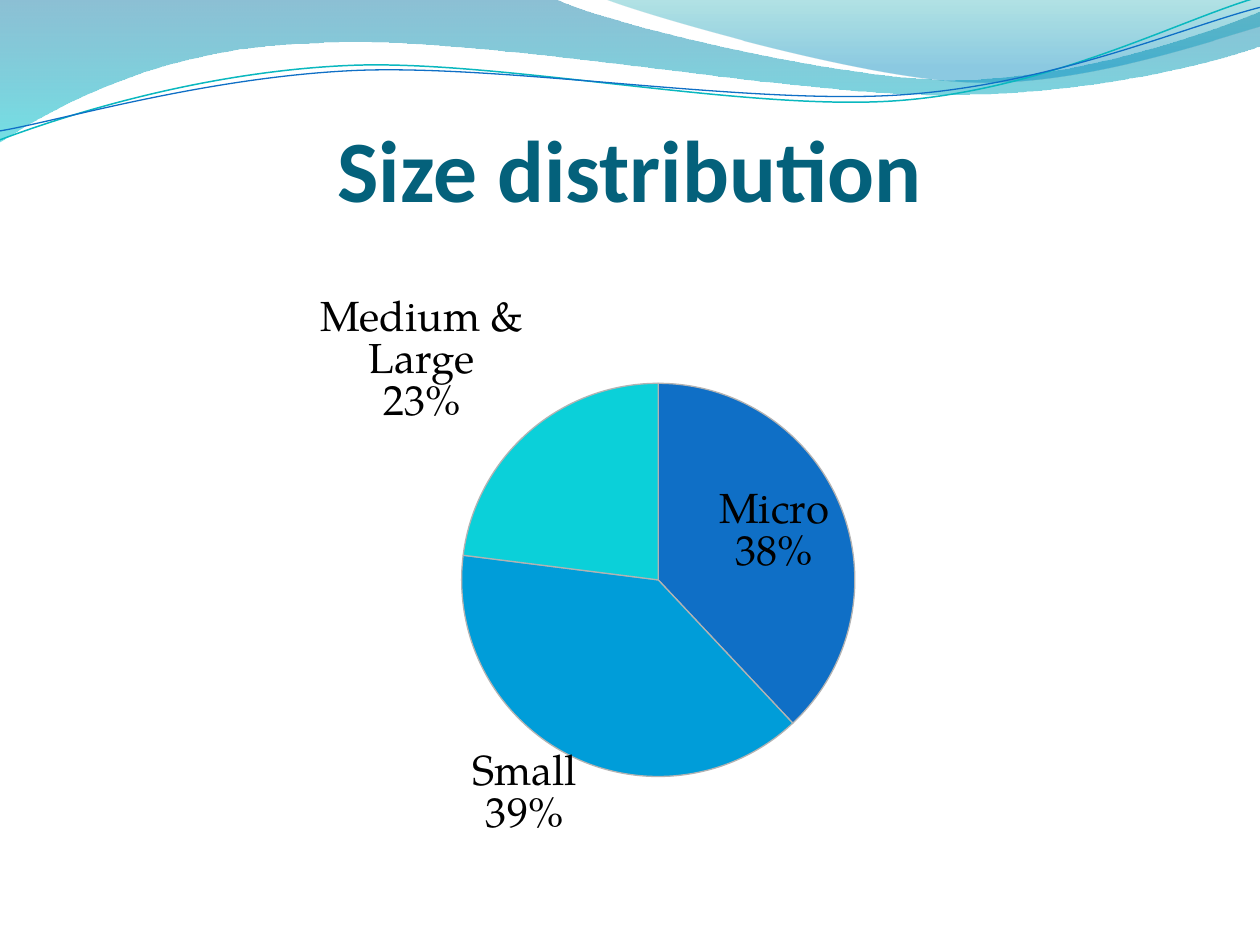
from copy import deepcopy
from dataclasses import dataclass

from lxml.etree import SubElement
from pptx import Presentation
from pptx.chart.data import CategoryChartData
from pptx.dml.color import RGBColor
from pptx.enum.chart import XL_CHART_TYPE as ChartType, XL_LABEL_POSITION as LabelPosition
from pptx.enum.text import MSO_ANCHOR as Anchor, PP_ALIGN as Align
from pptx.oxml import parse_xml
from pptx.oxml.ns import nsdecls, qn
from pptx.util import Cm, Pt

Point = tuple[float, float]
Segment = tuple[float, ...]


@dataclass(frozen=True)
class Theme:
    title_font: str = "Calibri"
    body_font: str = "TeX Gyre Pagella"
    title_size: float = 50
    label_size: float = 24
    title_color: str = "04617B"
    text_color: str = "000000"
    slice_line: str = "B3B3B3"


@dataclass(frozen=True)
class Stop:
    position: float
    color: str
    opacity: int


@dataclass(frozen=True)
class Wave:
    """Outline in cm: a segment holds one end point, or two controls and an end."""
    start: Point
    segments: tuple[Segment, ...]
    stops: tuple[Stop, ...] = ()
    line_color: str = ""
    line_width: float = 0


@dataclass(frozen=True)
class Slice:
    name: str
    value: int
    color: str


THEME = Theme()

WAVES = (
    Wave((0, 0), (
        (11.18, -0.03),
        (12.09, 0.43, 16.87, 1.6, 19.25, 1.6),
        (21.67, 1.6, 24.33, 0.66, 25.4, 0.23),
        (25.43, 0.91),
        (24.97, 1.12, 22.1, 1.93, 18.95, 1.91),
        (15.8, 1.91, 9.7, 0.71, 6.53, 0.86),
        (3.28, 0.91, 1.17, 2.11, -0.03, 2.87),
    ), stops=(Stop(0, "0074A1", 45), Stop(1, "00C6CF", 55))),
    Wave((12.17, -0.03), (
        (12.93, 0.28, 17.32, 1.57, 19.53, 1.65),
        (21.74, 1.75, 24.41, 0.81, 25.4, 0.53),
        (25.4, 0),
    ), stops=(Stop(0, "00A1A9", 30), Stop(0.8, "008BBF", 45))),
    Wave((0, 2.82), (
        (1.22, 2.36, 4.01, 1.45, 7.04, 1.32),
        (10.03, 1.19, 15.06, 2.26, 18.11, 2.03),
        (21.16, 1.8, 23.83, 0.38, 25.35, -0.05),
    ), line_color="0AB8BF", line_width=0.85),
    Wave((0, 2.64), (
        (1.19, 2.44, 4.17, 1.55, 7.19, 1.42),
        (10.24, 1.3, 15.16, 2.13, 18.21, 1.91),
        (21.23, 1.7, 23.9, 0.53, 25.4, 0.15),
    ), line_color="0F6FC6", line_width=0.75),
)

SLICES = (
    Slice("Micro", 38, "0F6FC6"),
    Slice("Small", 39, "009DD9"),
    Slice("Medium & Large", 23, "0BD0D9"),
)


def rgb(color: str) -> RGBColor:
    return RGBColor.from_string(color)


def apply_format(target, values: dict) -> None:
    for name, value in values.items():
        setattr(target, name, value)


def build_outline(slide, wave: Wave):
    """Build a freeform through the end points, then bend its lines into curves."""
    builder = slide.shapes.build_freeform(*map(Cm, wave.start))
    ends = [tuple(map(Cm, segment[-2:])) for segment in wave.segments]
    builder.add_line_segments(ends, close=bool(wave.stops))
    shape = builder.convert_to_shape()
    lines = list(shape._element.iter(qn("a:lnTo")))
    for line, segment in zip(lines, wave.segments):
        if len(segment) == 2:
            continue
        line.tag = qn("a:cubicBezTo")
        line.clear()
        for x, y in zip(segment[::2], segment[1::2]):
            SubElement(line, qn("a:pt"), x=str(Cm(x) - shape.left), y=str(Cm(y) - shape.top))
    return shape


def draw_wave(slide, wave: Wave):
    shape = build_outline(slide, wave)
    shape.shadow.inherit = False
    if not wave.stops:
        shape.fill.background()
        shape.line.color.rgb = rgb(wave.line_color)
        shape.line.width = Pt(wave.line_width)
        return shape
    shape.line.fill.background()
    shape.fill.gradient()
    shape.fill.gradient_angle = 270
    for gradient_stop, stop in zip(shape.fill.gradient_stops, wave.stops):
        gradient_stop.color.rgb = rgb(stop.color)
        gradient_stop.position = stop.position
    colors = shape.fill._xPr.iter(qn("a:srgbClr"))
    for color, stop in zip(colors, wave.stops):
        SubElement(color, qn("a:alpha")).set("val", str(stop.opacity * 1000))
    return shape


def move_to_master(shape, master, order: int) -> None:
    """Put the shape behind the master's placeholders, so it decorates every slide."""
    shape._element.nvSpPr.cNvPr.set("id", str(100 + order))
    master.shapes._spTree.insert(2 + order, shape._element)


def format_title(slide, text: str) -> None:
    title = slide.shapes.title
    apply_format(title, dict(left=Cm(1.27), top=Cm(1.95), width=Cm(22.86), height=Cm(2.49)))
    apply_format(title.text_frame, dict(
        text=text, vertical_anchor=Anchor.BOTTOM, word_wrap=True,
        margin_left=0, margin_right=0, margin_top=Cm(0.13), margin_bottom=0))
    paragraph = title.text_frame.paragraphs[0]
    paragraph.alignment = Align.CENTER
    font = paragraph.runs[0].font
    apply_format(font, dict(name=THEME.title_font, size=Pt(THEME.title_size), bold=True))
    font.color.rgb = rgb(THEME.title_color)


def manual_layout(content: str, **fractions: float):
    sizes = "".join(f'<c:{name} val="{value}"/>' for name, value in fractions.items())
    return parse_xml(f'<c:layout {nsdecls("c")}><c:manualLayout>{content}{sizes}'
                     '</c:manualLayout></c:layout>')


def place_plot(chart) -> None:
    plot_area = chart._chartSpace.chart.plotArea
    for old in plot_area.findall(qn("c:layout")):
        plot_area.remove(old)
    modes = '<c:layoutTarget val="inner"/><c:xMode val="edge"/><c:yMode val="edge"/>'
    plot_area.insert(0, manual_layout(modes, x=0.35, y=0.19, w=0.35, h=0.65))


def shift_label(labels, index: int, x: float, y: float) -> None:
    """Give one point its own label, moved by fractions of the chart frame."""
    label = parse_xml(f'<c:dLbl {nsdecls("c")}><c:idx val="{index}"/></c:dLbl>')
    label.append(manual_layout("", x=x, y=y))
    for part in labels._element:
        if part.tag != qn("c:showLeaderLines"):
            label.append(deepcopy(part))
    labels._element.insert(0, label)


def draw_pie(slide) -> None:
    data = CategoryChartData()
    data.categories = [part.name for part in SLICES]
    data.add_series("Series 1", [part.value for part in SLICES])
    chart = slide.shapes.add_chart(
        ChartType.PIE, Cm(1.27), Cm(5.41), Cm(22.86), Cm(12.2), data).chart
    apply_format(chart, dict(has_title=False, has_legend=False))
    apply_format(chart.font, dict(name=THEME.body_font, size=Pt(10)))
    chart.font.color.rgb = rgb(THEME.text_color)
    place_plot(chart)
    plot = chart.plots[0]
    plot.vary_by_categories = True
    for index, part in enumerate(SLICES):
        point_format = plot.series[0].points[index].format
        point_format.fill.solid()
        point_format.fill.fore_color.rgb = rgb(part.color)
        point_format.line.color.rgb = rgb(THEME.slice_line)
        point_format.line.width = Pt(0.75)
    labels = plot.series[0].data_labels
    apply_format(labels, dict(
        show_percentage=True, show_category_name=True, show_value=False,
        number_format="0%", number_format_is_linked=False, position=LabelPosition.BEST_FIT))
    apply_format(labels.font, dict(name=THEME.body_font, size=Pt(THEME.label_size)))
    labels.font.color.rgb = rgb(THEME.text_color)
    separator = parse_xml(f'<c:separator {nsdecls("c")}>\n</c:separator>')
    labels._element.find(qn("c:showBubbleSize")).addnext(separator)
    shift_label(labels, 1, x=0.01, y=-0.01)


def main() -> None:
    presentation = Presentation()
    apply_format(presentation, dict(slide_width=Cm(25.4), slide_height=Cm(19.05)))
    slide = presentation.slides.add_slide(presentation.slide_layouts[5])
    for order, wave in enumerate(WAVES):
        move_to_master(draw_wave(slide, wave), presentation.slide_master, order)
    format_title(slide, "Size distribution")
    draw_pie(slide)
    presentation.save("out.pptx")


if __name__ == "__main__":
    main()
